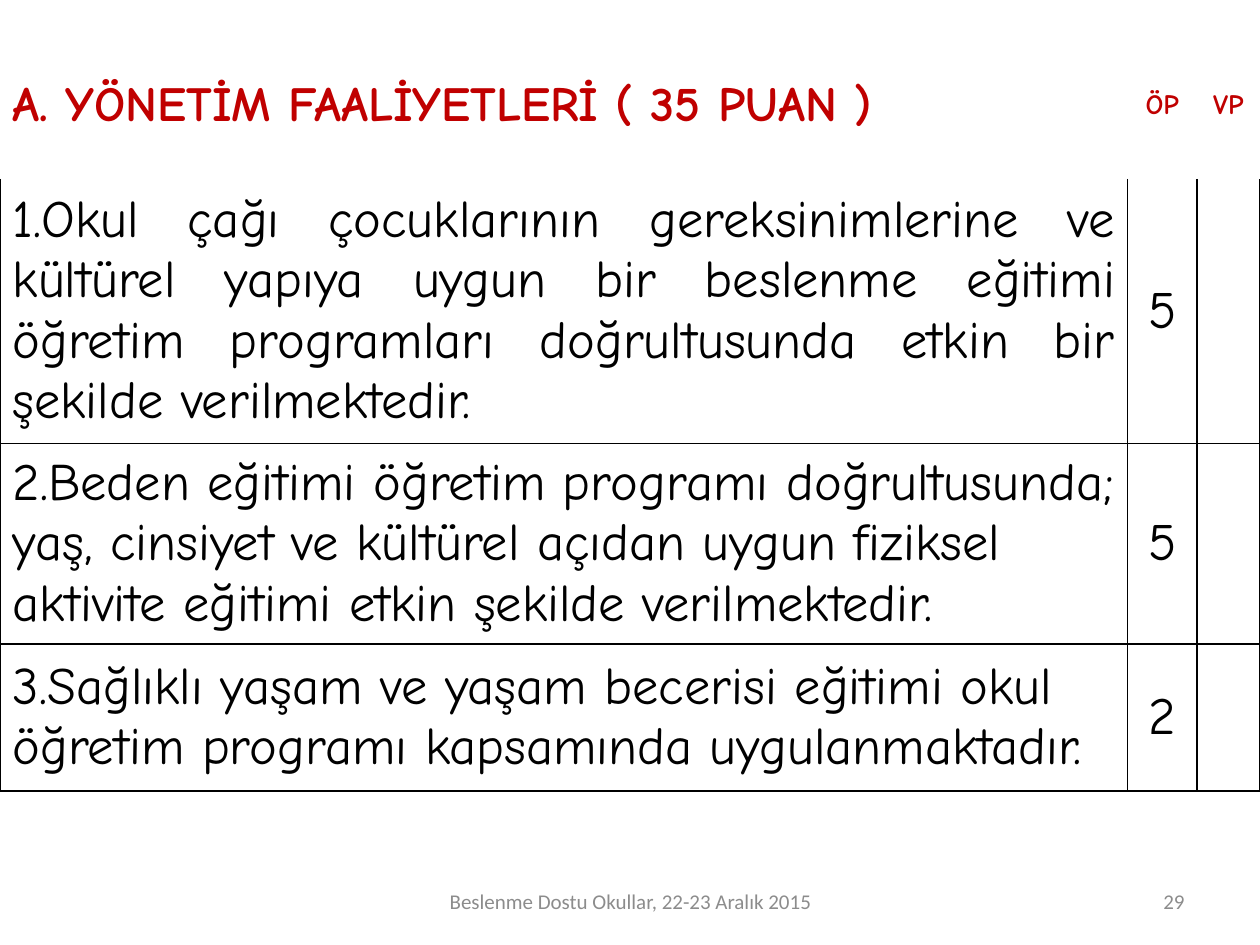
from dataclasses import dataclass

from lxml import etree
from pptx import Presentation
from pptx import util as u
from pptx.dml.color import RGBColor
from pptx.enum import text
from pptx.oxml.ns import qn


@dataclass(frozen=True)
class Theme:
    heading: str = "C00000"
    ink: str = "000000"
    muted: str = "8C8C8C"
    body_font: str = "Comic Neue"
    footer_font: str = "Calibri"
    heading_size: int = 28
    label_size: int = 16
    body_size: int = 30
    footer_size: int = 12
    rule: float = 1


THEME = Theme()
WIDTH, HEIGHT = 10, 7.5
COLUMNS = (8.95, 0.55, 0.5)
ROWS = (1.17, 2.1, 1.59, 1.17)
LEFT, CENTER = text.PP_ALIGN.LEFT, text.PP_ALIGN.CENTER
RIGHT, JUSTIFY = text.PP_ALIGN.RIGHT, text.PP_ALIGN.JUSTIFY

HEADER = ("A. YÖNETİM FAALİYETLERİ ( 35 PUAN )", "ÖP", "VP")
CRITERIA = (
    ("Okul çağı çocuklarının gereksinimlerine ve kültürel yapıya uygun bir "
     "beslenme eğitimi öğretim programları doğrultusunda etkin bir şekilde "
     "verilmektedir.", "5"),
    ("2.Beden eğitimi öğretim programı doğrultusunda; yaş, cinsiyet ve "
     "kültürel açıdan uygun fiziksel aktivite eğitimi etkin şekilde "
     "verilmektedir.", "5"),
    ("3.Sağlıklı yaşam ve yaşam becerisi eğitimi okul öğretim programı "
     "kapsamında uygulanmaktadır.", "2"),
)


def write(frame, words, *, size, color=THEME.ink, font=THEME.body_font,
          bold=False, align=LEFT):
    paragraph = frame.paragraphs[0]
    paragraph.alignment = align
    run = paragraph.add_run()
    run.text = words
    run.font.name = font
    run.font.size = u.Pt(size)
    run.font.bold = bold
    run.font.color.rgb = RGBColor.from_string(color)
    return paragraph


def number(paragraph):
    """Number the paragraph automatically, with no indent."""
    props = paragraph._p.get_or_add_pPr()
    props.set("marL", "0")
    props.set("indent", "0")
    etree.SubElement(props, qn("a:buFont"), typeface=THEME.body_font)
    etree.SubElement(props, qn("a:buAutoNum"), type="arabicPeriod")


def rule_cell(cell, ruled_sides):
    """Draw the named sides (L, R, T, B) and clear the others."""
    cell.fill.background()
    props = cell._tc.get_or_add_tcPr()
    for place, side in enumerate("LRTB"):
        line = etree.Element(qn(f"a:ln{side}"))
        if side in ruled_sides:
            line.set("w", str(u.Pt(THEME.rule)))
            fill = etree.SubElement(line, qn("a:solidFill"))
            etree.SubElement(fill, qn("a:srgbClr"), val=THEME.ink)
        else:
            line.set("w", "0")
            etree.SubElement(line, qn("a:noFill"))
        props.insert(place, line)


def add_criteria(slide, left, top):
    table = slide.shapes.add_table(
        len(ROWS), len(COLUMNS), u.Inches(left), u.Inches(top),
        u.Inches(sum(COLUMNS)), u.Inches(sum(ROWS))).table
    table.first_row = table.horz_banding = False
    for column, width in zip(table.columns, COLUMNS):
        column.width = u.Inches(width)
    for index, (row, height) in enumerate(zip(table.rows, ROWS)):
        row.height = u.Inches(height)
        for cell in row.cells:
            cell.vertical_anchor = text.MSO_ANCHOR.MIDDLE
            rule_cell(cell, ("", "LRB")[index] if index < 2 else "LRTB")

    for col, words in enumerate(HEADER):
        write(table.cell(0, col).text_frame, words, bold=True,
              color=THEME.heading,
              size=THEME.label_size if col else THEME.heading_size,
              align=CENTER if col else LEFT)
    for row, (criterion, points) in enumerate(CRITERIA, start=1):
        first = row == 1
        paragraph = write(table.cell(row, 0).text_frame, criterion,
                          size=THEME.body_size,
                          align=JUSTIFY if first else LEFT)
        if first:
            number(paragraph)
        write(table.cell(row, 1).text_frame, points, size=THEME.body_size,
              align=CENTER)


def add_footer(slide, top, height):
    parts = ((3.42, 3.17, "Beslenme Dostu Okullar, 22-23 Aralık 2015", CENTER),
             (7.17, 2.33, "29", RIGHT))
    for left, width, words, align in parts:
        frame = slide.shapes.add_textbox(
            *map(u.Inches, (left, top, width, height))).text_frame
        frame.word_wrap = True
        frame.vertical_anchor = text.MSO_ANCHOR.MIDDLE
        write(frame, words, size=THEME.footer_size, color=THEME.muted,
              font=THEME.footer_font, align=align)


def main():
    deck = Presentation()
    deck.slide_width, deck.slide_height = u.Inches(WIDTH), u.Inches(HEIGHT)
    slide = deck.slides.add_slide(deck.slide_layouts[6])
    add_criteria(slide, left=0, top=HEIGHT / 30)
    add_footer(slide, top=6.95, height=0.4)
    deck.save("out.pptx")


if __name__ == "__main__":
    main()
